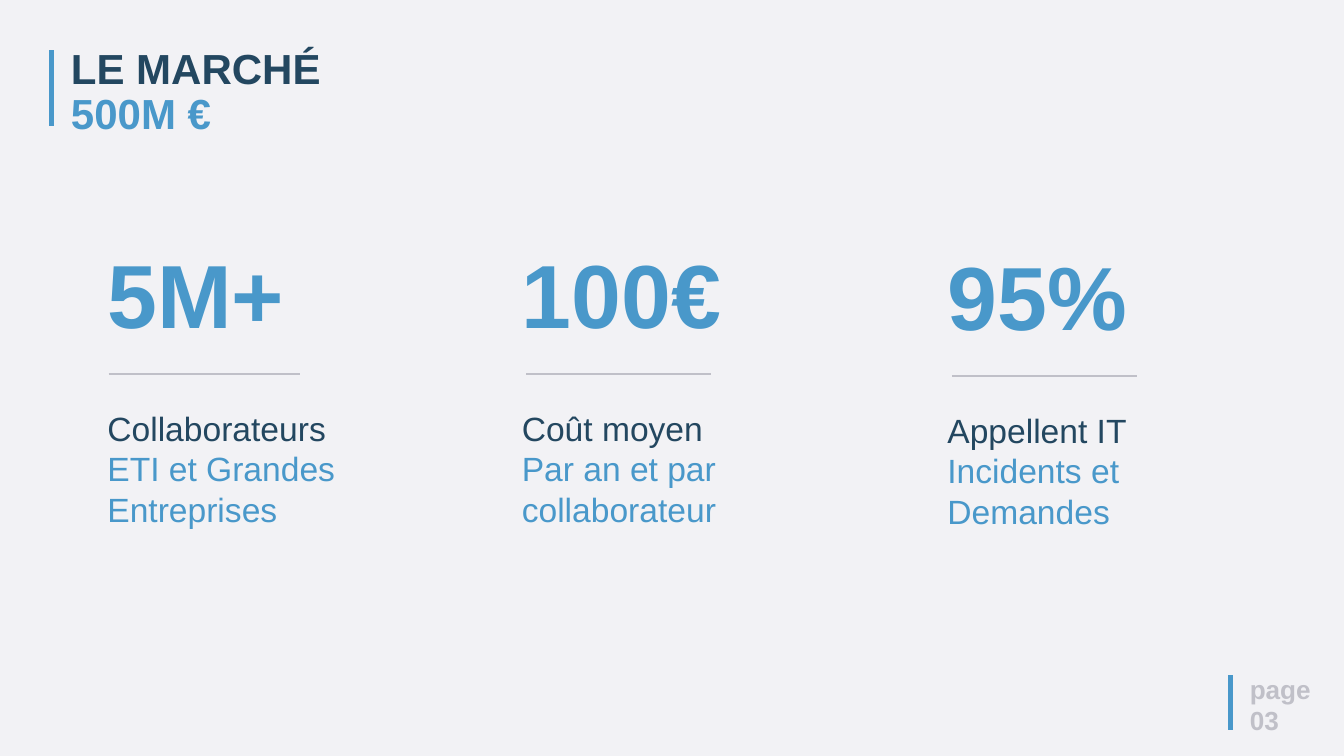
from lxml.etree import SubElement
from pptx import Presentation
from pptx.dml.color import RGBColor
from pptx.enum.shapes import MSO_CONNECTOR
from pptx.oxml.ns import qn
from pptx.util import Pt

NAVY = RGBColor(0x23, 0x47, 0x60)
BLUE = RGBColor(0x49, 0x98, 0xCA)
GREY = RGBColor(0xC0, 0xC0, 0xC8)
PAPER = RGBColor(0xF2, 0xF2, 0xF5)

TITLE = {"size": Pt(45), "bold": True}
PAGE = {"size": Pt(28), "bold": True}
FIGURE = {"size": Pt(96), "bold": True}
LABEL = {"size": Pt(36), "bold": False}

STATS = [
    (108, 249, "5M+", "Collaborateurs", "ETI et Grandes Entreprises", 288, (116.5, 321)),
    (552, 249, "100€", "Coût moyen", "Par an et par collaborateur", 297, (564, 762)),
    (1008, 251, "95%", "Appellent IT", "Incidents et Demandes", 330, (1020, 1218)),
]


def add_text(shapes, box, lines, fmt, spacing=None):
    s = shapes.add_textbox(*map(Pt, box))
    tf = s.text_frame
    tf.word_wrap = True
    for side in ("left", "right", "top", "bottom"):
        setattr(tf, f"margin_{side}", Pt(7.2))
    for i, (text, color) in enumerate(lines):
        p = tf.add_paragraph() if i else tf.paragraphs[0]
        p.line_spacing = spacing
        r = p.add_run()
        r.text = text
        for name, value in {"name": "Arial", **fmt}.items():
            setattr(r.font, name, value)
        r.font.color.rgb = color


def add_line(shapes, x1, y1, x2, y2, color, width):
    s = shapes.add_connector(MSO_CONNECTOR.STRAIGHT, *map(Pt, (x1, y1, x2, y2)))
    s.line.color.rgb = color
    s.line.width = Pt(width)
    SubElement(s._element.spPr, qn("a:effectLst"))


def add_stat(shapes, x, y, figure, label, detail, width, rule):
    group = shapes.add_group_shape().shapes
    add_text(group, (x, y + 181, width, 138), [(label, NAVY), (detail, BLUE)], LABEL)
    add_text(group, (x, y, 288, 124), [(figure, BLUE)], FIGURE)
    add_line(group, rule[0], y + 152, rule[1], y + 152, GREY, 2)


def main():
    """Build the market slide and save it."""
    prs = Presentation()
    prs.slide_width, prs.slide_height = Pt(1440), Pt(810)
    slide = prs.slides.add_slide(prs.slide_layouts[6])
    fill = slide.background.fill
    fill.solid()
    fill.fore_color.rgb = PAPER
    shapes = slide.shapes

    add_line(shapes, 55.5, 54, 55.5, 135, BLUE, 5)
    add_line(shapes, 1318.5, 723.5, 1318.5, 782, BLUE, 5)
    add_text(shapes, (69, 44.5, 429, 106.5),
             [("LE MARCHÉ", NAVY), ("500M €", BLUE)], TITLE, 0.9)
    add_text(shapes, (1332, 714, 108, 75), [("page", GREY), ("03", GREY)], PAGE)
    for stat in STATS:
        add_stat(shapes, *stat)
    prs.save("out.pptx")


if __name__ == "__main__":
    main()
